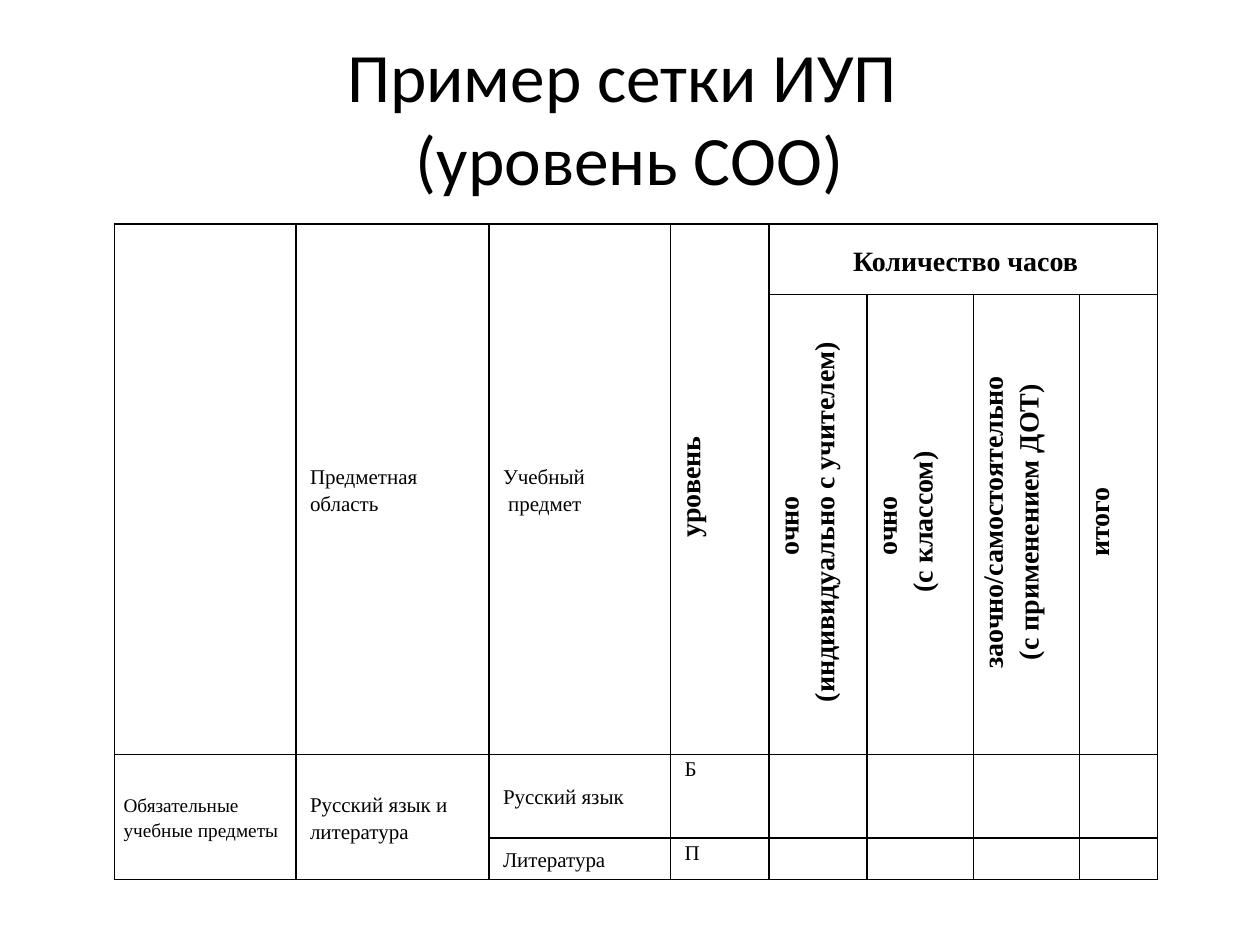
from lxml import etree
from pptx import Presentation
from pptx.dml.color import RGBColor
from pptx.enum.text import MSO_ANCHOR, PP_ALIGN
from pptx.oxml.ns import qn
from pptx.util import Cm, Pt

LEFT, CENTER, JUSTIFY = PP_ALIGN.LEFT, PP_ALIGN.CENTER, PP_ALIGN.JUSTIFY
TOP, MIDDLE = MSO_ANCHOR.TOP, MSO_ANCHOR.MIDDLE
BLACK, WHITE = "000000", "FFFFFF"


def color(value):
    return RGBColor.from_string(value)


class Slide:
    """Holds the style and the current page."""

    title_font, table_font = "Calibri", "Times New Roman"

    def __init__(self, deck):
        self.page = deck.slides.add_slide(deck.slide_layouts[6])

    def span(self, para, text, font, size, bold=False):
        span = para.add_run()
        span.text = text
        span.font.name, span.font.size, span.font.bold = font, Pt(size), bold
        span.font.color.rgb = color(BLACK)

    def title(self, left, top, width, height, lines, size):
        box = self.page.shapes.add_textbox(Cm(left), Cm(top), Cm(width), Cm(height))
        frame = box.text_frame
        frame.word_wrap = True
        frame.vertical_anchor = MIDDLE
        para = frame.paragraphs[0]
        para.alignment = CENTER
        for index, line in enumerate(lines):
            if index:
                para.add_line_break()
            self.span(para, line, self.title_font, size)

    def table(self, left, top, widths, heights):
        frame = self.page.shapes.add_table(
            len(heights), len(widths), Cm(left), Cm(top), Cm(sum(widths)), Cm(sum(heights)))
        table = frame.table
        table.first_row = table.horz_banding = False
        for column, width in zip(table.columns, widths):
            column.width = Cm(width)
        for row, height in zip(table.rows, heights):
            row.height = Cm(height)
        for cell in table.iter_cells():
            cell.margin_left = cell.margin_right = Cm(0.18)
            cell.margin_top = cell.margin_bottom = 0
            self.borders(cell)
            cell.fill.solid()
            cell.fill.fore_color.rgb = color(WHITE)
        return table

    def borders(self, cell):
        properties = cell._tc.get_or_add_tcPr()
        for side in ("a:lnL", "a:lnR", "a:lnT", "a:lnB"):
            line = etree.SubElement(properties, qn(side), w=str(Pt(1)))
            fill = etree.SubElement(line, qn("a:solidFill"))
            etree.SubElement(fill, qn("a:srgbClr"), val=BLACK)

    def cell_text(self, cell, lines, size=12, bold=False, align=LEFT,
                  anchor=MIDDLE, indent=0.1, upright=False):
        cell.vertical_anchor = anchor
        if upright:
            cell._tc.get_or_add_tcPr().set("vert", "vert270")
        frame = cell.text_frame
        for index, line in enumerate(lines):
            para = frame.add_paragraph() if index else frame.paragraphs[0]
            para.alignment = align
            para.line_spacing = 1.15
            para._p.get_or_add_pPr().set("marL", str(Cm(indent)))
            self.span(para, line, self.table_font, size, bold)


def main():
    deck = Presentation()
    deck.slide_width, deck.slide_height = Cm(25.4), Cm(19.05)
    slide = Slide(deck)

    # Title
    slide.title(1.27, 0.76, 22.86, 3.18, ["Пример сетки ИУП ", "(уровень СОО)"], 39.6)

    # Grid with merged cells
    table = slide.table(2.31, 4.52,
                        [3.66, 3.89, 3.66, 1.98, 1.98, 2.14, 2.14, 1.57],
                        [1.42, 9.27, 1.68, 0.84])
    for column in range(4):
        table.cell(0, column).merge(table.cell(1, column))
    table.cell(0, 4).merge(table.cell(0, 7))
    for column in range(2):
        table.cell(2, column).merge(table.cell(3, column))

    # Column headings
    heading = {"size": 16, "bold": True, "align": CENTER}
    slide.cell_text(table.cell(0, 1), ["Предметная область"])
    slide.cell_text(table.cell(0, 2), ["Учебный", " предмет"])
    slide.cell_text(table.cell(0, 4), ["Количество часов"], **heading)
    upright_headings = [
        (0, 3, TOP, ["уровень"]),
        (1, 4, MIDDLE, ["очно ", "(индивидуально с учителем)"]),
        (1, 5, MIDDLE, ["очно ", "(с классом)"]),
        (1, 6, TOP, ["заочно/самостоятельно", "(с применением ДОТ)"]),
        (1, 7, TOP, ["итого"]),
    ]
    for row, column, anchor, lines in upright_headings:
        slide.cell_text(table.cell(row, column), lines, anchor=anchor, upright=True, **heading)

    # Subjects and their levels
    slide.cell_text(table.cell(2, 0), ["Обязательные учебные предметы "],
                    size=11, align=JUSTIFY, indent=0)
    slide.cell_text(table.cell(2, 1), ["Русский язык и литература"])
    for row, (subject, level) in enumerate([("Русский язык", "Б"), ("Литература", "П")], 2):
        slide.cell_text(table.cell(row, 2), [subject])
        slide.cell_text(table.cell(row, 3), [level], anchor=TOP)

    deck.save("out.pptx")


if __name__ == "__main__":
    main()
